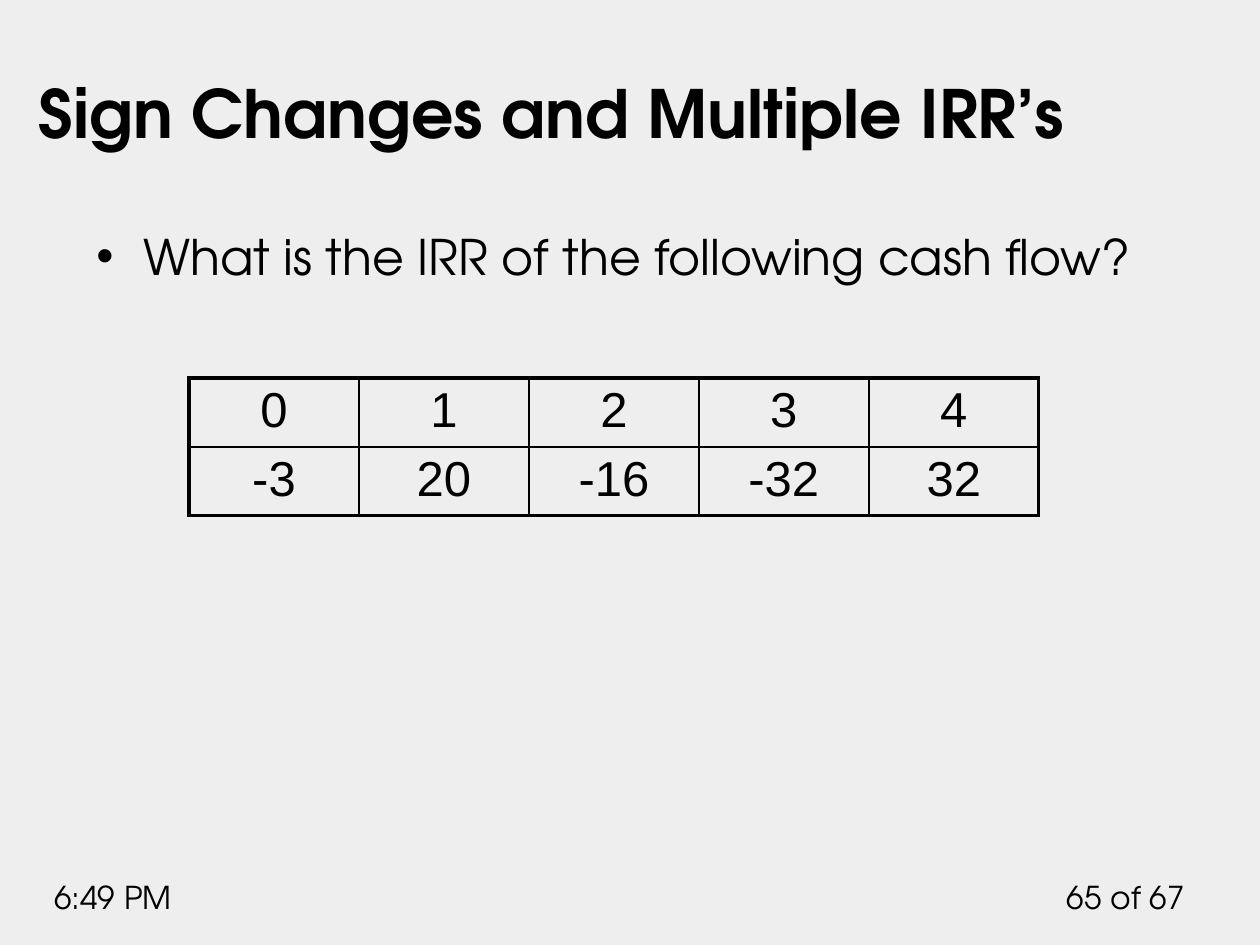
from lxml import etree
from pptx import Presentation
from pptx.dml.color import RGBColor
from pptx.enum.text import MSO_ANCHOR, PP_ALIGN
from pptx.oxml.ns import qn
from pptx.util import Pt

LEFT, CENTER, RIGHT = PP_ALIGN.LEFT, PP_ALIGN.CENTER, PP_ALIGN.RIGHT
TOP, BOTTOM = MSO_ANCHOR.TOP, MSO_ANCHOR.BOTTOM
BLACK = RGBColor(0x00, 0x00, 0x00)
BACKGROUND = RGBColor(0xEE, 0xEE, 0xEE)
TEXT_FONT = "TeX Gyre Adventor"
TABLE_FONT = "Arial"
THIN, THICK = 1, 2.25

CASH_FLOWS = [
    ["0", "1", "2", "3", "4"],
    ["-3", "20", "-16", "-32", "32"],
]


def px(length):
    return round(length * 914400 / 126)


def place(shape, left, top, width, height):
    shape.left, shape.top = px(left), px(top)
    shape.width, shape.height = px(width), px(height)


def write(frame, text, size, font=TEXT_FONT, bold=False, align=LEFT,
          anchor=TOP, bullet_indent=0):
    frame.word_wrap = True
    frame.vertical_anchor = anchor
    paragraph = frame.paragraphs[0]
    paragraph.text = text
    paragraph.alignment = align
    if bullet_indent:
        properties = paragraph._p.get_or_add_pPr()
        properties.set("marL", str(px(bullet_indent)))
        properties.set("indent", str(-px(bullet_indent)))
        etree.SubElement(properties, qn("a:buFont"), typeface="Arial")
        etree.SubElement(properties, qn("a:buChar"), char="•")
    style = paragraph.runs[0].font
    style.name, style.size, style.bold = font, Pt(size), bold
    style.color.rgb = BLACK


def add_text(slide, text, box, size, **text_format):
    textbox = slide.shapes.add_textbox(0, 0, 0, 0)
    place(textbox, *box)
    write(textbox.text_frame, text, size, **text_format)


def set_borders(cell, widths):
    properties = cell._tc.get_or_add_tcPr()
    for position, (side, width) in enumerate(widths.items()):
        line = etree.Element(qn(f"a:ln{side}"), w=str(Pt(width)))
        fill = etree.SubElement(line, qn("a:solidFill"))
        etree.SubElement(fill, qn("a:srgbClr"), val=str(BLACK))
        properties.insert(position, line)


def add_cash_flow_table(slide, left, top, column_width, row_height):
    row_count, column_count = len(CASH_FLOWS), len(CASH_FLOWS[0])
    table = slide.shapes.add_table(
        row_count, column_count, px(left), px(top),
        px(column_width * column_count), px(row_height * row_count)).table
    table.first_row = table.horz_banding = False
    for column in table.columns:
        column.width = px(column_width)
    for r, values in enumerate(CASH_FLOWS):
        table.rows[r].height = px(row_height)
        for c, value in enumerate(values):
            cell = table.cell(r, c)
            cell.fill.background()
            cell.margin_top = cell.margin_bottom = px(5)
            write(cell.text_frame, value, 28, font=TABLE_FONT, align=CENTER)
            # Thick frame outside, thin rules inside
            set_borders(cell, {
                "L": THICK if c == 0 else THIN,
                "R": THICK if c == column_count - 1 else THIN,
                "T": THICK if r == 0 else THIN,
                "B": THICK if r == row_count - 1 else THIN,
            })


def main():
    presentation = Presentation()
    presentation.slide_width, presentation.slide_height = px(1260), px(945)
    slide = presentation.slides.add_slide(presentation.slide_layouts[5])
    slide.background.fill.solid()
    slide.background.fill.fore_color.rgb = BACKGROUND

    # Footer
    add_text(slide, "65 of 67", (1050, 872, 147, 50), 18, align=RIGHT)
    add_text(slide, "6:49 PM", (42, 872, 199, 50), 18)

    # Title and question
    title = slide.shapes.title
    place(title, 26, 32, 1105, 126)
    write(title.text_frame, "Sign Changes and Multiple IRR’s", 38,
          bold=True, anchor=BOTTOM)
    add_text(slide, "What is the IRR of the following cash flow?",
             (84, 220, 1061, 640), 28, bullet_indent=47)

    # Periods and their cash flows
    add_cash_flow_table(slide, 189, 378, 170, 67)

    presentation.save("out.pptx")


if __name__ == "__main__":
    main()
